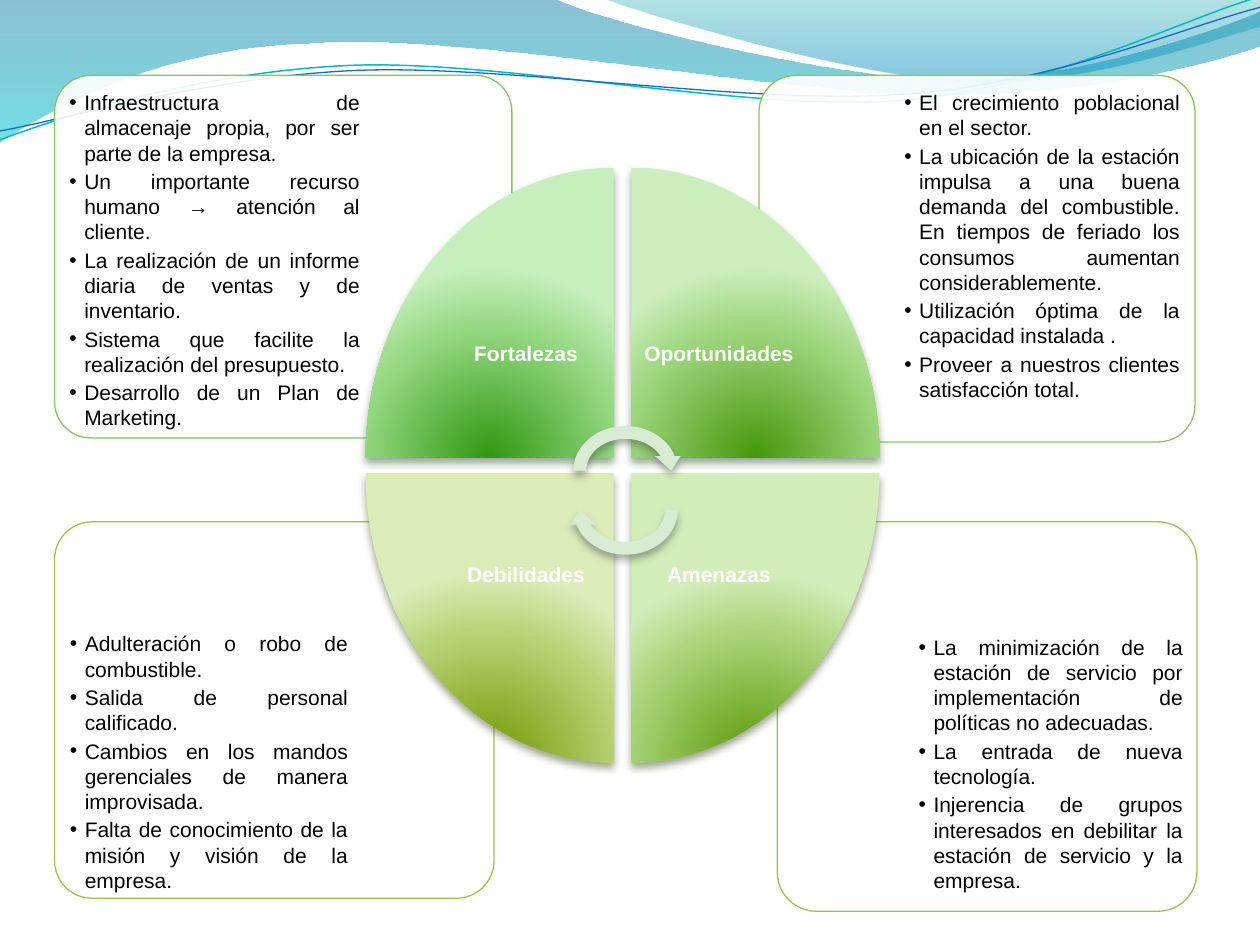
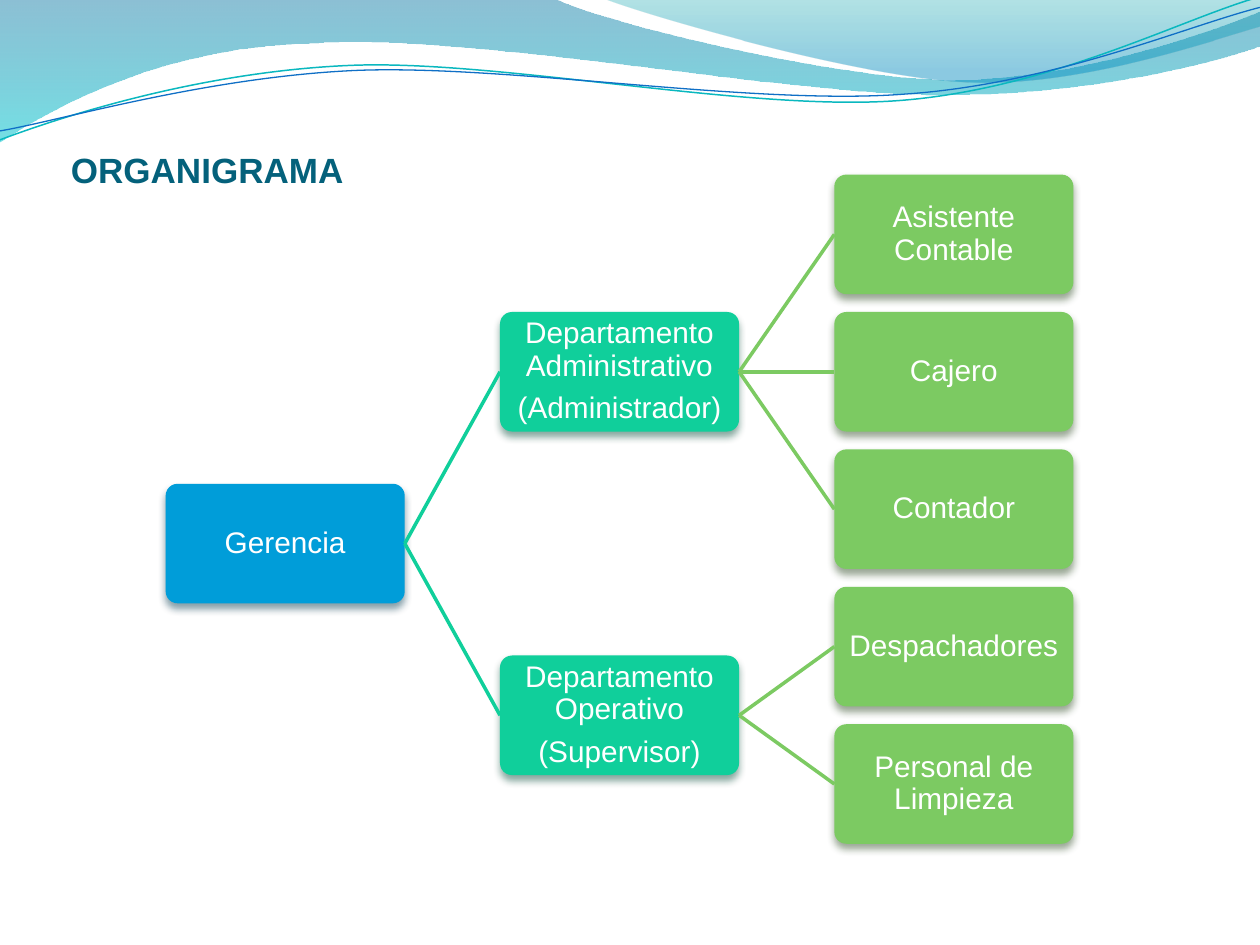
from lxml.etree import SubElement
from pptx import Presentation
from pptx.dml.color import RGBColor
from pptx.enum.shapes import MSO_CONNECTOR, MSO_SHAPE
from pptx.enum.text import MSO_ANCHOR, PP_ALIGN
from pptx.oxml.ns import qn
from pptx.util import Cm, Pt

WHITE = RGBColor(0xFF, 0xFF, 0xFF)
BLACK = RGBColor(0x00, 0x00, 0x00)
TITLE_TEAL = RGBColor(0x04, 0x61, 0x7B)
BLUE = RGBColor(0x00, 0x9D, 0xD9)
MINT = RGBColor(0x10, 0xCF, 0x9B)
GREEN = RGBColor(0x7C, 0xCA, 0x62)
PALE_GREEN = RGBColor(0xD7, 0xEC, 0xD3)
WAVE_TEAL = RGBColor(0x0A, 0xB8, 0xBF)
WAVE_BLUE = RGBColor(0x0F, 0x6F, 0xC6)
OPPORTUNITY_GREEN = RGBColor(0x88, 0xC7, 0x5A)
THREAT_GREEN = RGBColor(0x95, 0xC5, 0x51)
WEAKNESS_GREEN = RGBColor(0xA5, 0xC2, 0x49)


def finish(shape, stops=None, radial=False, shadow=None):
    """Fill with gradient stops (position, colour, opacity) and set the soft shadow."""
    properties = shape.element.spPr
    if stops:
        shape.fill.gradient()
        gradient = properties.find(qn("a:gradFill"))
        for child in list(gradient):
            gradient.remove(child)
        gradient.set("rotWithShape", "0")
        stop_list = SubElement(gradient, qn("a:gsLst"))
        for position, colour, opacity in stops:
            stop = SubElement(stop_list, qn("a:gs"), pos=str(position * 1000))
            tint = SubElement(stop, qn("a:srgbClr"), val=colour)
            if opacity < 100:
                SubElement(tint, qn("a:alpha"), val=str(opacity * 1000))
        if radial:
            circle = SubElement(gradient, qn("a:path"), path="circle")
            SubElement(circle, qn("a:fillToRect"), l="50000", t="130000", r="50000", b="-30000")
        else:
            SubElement(gradient, qn("a:lin"), ang="5400000", scaled="0")
    shape.shadow.inherit = False
    if shadow:
        outer = SubElement(properties.find(qn("a:effectLst")), qn("a:outerShdw"),
                           blurRad=str(Pt(4.5)), dist=str(Pt(3)), dir="5400000", rotWithShape="0")
        tint = SubElement(outer, qn("a:srgbClr"), val=shadow)
        SubElement(tint, qn("a:alpha"), val="48000")


def write(shape, lines, size, colour, margins, align=PP_ALIGN.CENTER,
          anchor=MSO_ANCHOR.MIDDLE, spacing=0.9, gap=0, bold=False):
    """Set one paragraph per line; gap is the space between them in points."""
    frame = shape.text_frame
    frame.text = "\n".join(lines)
    frame.word_wrap = True
    frame.vertical_anchor = anchor
    frame.margin_left = frame.margin_right = Cm(margins[0])
    frame.margin_top = frame.margin_bottom = Cm(margins[1])
    for para in frame.paragraphs:
        para.alignment = align
        para.line_spacing = spacing
        for span in para.runs:
            span.font.name = "Arial"
            span.font.size = Pt(size)
            span.font.bold = bold
            span.font.color.rgb = colour
    for para in frame.paragraphs[:-1]:
        para.space_after = Pt(gap)


deck = Presentation()
deck.slide_width, deck.slide_height = Cm(25.4), Cm(19.05)
blank = deck.slide_layouts[6]
page = deck.slides.add_slide(blank)

# Waves shared through the master: a segment is one point (line) or three (Bézier curve)
bands = [
    ((0, 0),
     [[(11.18, -0.03)],
      [(12.09, 0.43), (16.87, 1.6), (19.25, 1.6)],
      [(21.67, 1.6), (24.33, 0.66), (25.4, 0.23)],
      [(25.43, 0.91)],
      [(24.97, 1.12), (22.1, 1.93), (18.95, 1.91)],
      [(15.8, 1.91), (9.7, 0.71), (6.53, 0.86)],
      [(3.28, 0.91), (1.17, 2.11), (-0.03, 2.87)]],
     [(0, "0074A1", 45), (100, "00C6CF", 55)], None, 0),
    ((12.17, -0.03),
     [[(12.93, 0.28), (17.32, 1.57), (19.53, 1.65)],
      [(21.74, 1.75), (24.41, 0.81), (25.4, 0.53)],
      [(25.4, 0)]],
     [(0, "00A1A9", 30), (80, "008BBF", 45)], None, 0),
    ((0, 2.82),
     [[(1.22, 2.36), (4.01, 1.45), (7.04, 1.32)],
      [(10.03, 1.19), (15.06, 2.26), (18.11, 2.03)],
      [(21.16, 1.8), (23.83, 0.38), (25.35, -0.05)]],
     None, WAVE_TEAL, 0.85),
    ((0, 2.64),
     [[(1.19, 2.44), (4.17, 1.55), (7.19, 1.42)],
      [(10.24, 1.3), (15.16, 2.13), (18.21, 1.9)],
      [(21.23, 1.7), (23.9, 0.53), (25.4, 0.15)]],
     None, WAVE_BLUE, 0.75),
]
for start, segments, stops, line_colour, line_width in bands:
    builder = page.shapes.build_freeform(Cm(start[0]), Cm(start[1]))
    builder.add_line_segments([(Cm(x), Cm(y)) for segment in segments for x, y in segment],
                              close=stops is not None)
    wave = builder.convert_to_shape()
    # Join the three lines of each curved segment into one Bézier curve
    lines = iter(list(wave.element.iter(qn("a:lnTo"))))
    for segment in segments:
        pieces = [next(lines) for _ in segment]
        if len(pieces) == 3:
            curve = SubElement(pieces[0].getparent(), qn("a:cubicBezTo"))
            pieces[0].addprevious(curve)
            for piece in pieces:
                curve.append(piece[0])
                piece.getparent().remove(piece)
    finish(wave, stops)
    if stops:
        wave.line.fill.background()
    else:
        wave.fill.background()
        wave.line.color.rgb = line_colour
        wave.line.width = Pt(line_width)
    deck.slide_master.shapes.element.append(wave.element)

# Slide 1: SWOT cards, with the card and its text placed separately
cards = [
    ((15.67, 10.52, 8.46, 7.85), (18.39, 12.66, 5.59, 5.54), THREAT_GREEN,
     ["La minimización de la estación de servicio por implementación de políticas no adecuadas.",
      "La entrada de nueva tecnología.",
      "Injerencia de grupos interesados en debilitar la estación de servicio y la empresa."]),
    ((1.1, 10.52, 8.86, 7.59), (1.28, 12.59, 5.87, 5.36), WEAKNESS_GREEN,
     ["Adulteración o robo de combustible.",
      "Salida de personal calificado.",
      "Cambios en los mandos gerenciales de manera improvisada.",
      "Falta de conocimiento de la misión y visión de la empresa."]),
    ((15.3, 1.52, 8.79, 7.39), (18.1, 1.68, 5.82, 5.23), OPPORTUNITY_GREEN,
     ["El crecimiento poblacional en el sector.",
      "La ubicación de la estación impulsa a una buena demanda del combustible. "
      "En tiempos de feriado los consumos aumentan considerablemente.",
      "Utilización óptima de la capacidad instalada .",
      "Proveer a nuestros clientes satisfacción total."]),
    ((1.1, 1.52, 9.22, 7.31), (1.27, 1.68, 6.12, 5.16), GREEN,
     ["Infraestructura de almacenaje propia, por ser parte de la empresa.",
      "Un importante recurso humano → atención al cliente.",
      "La realización de un informe diaria de ventas y de inventario.",
      "Sistema que facilite la realización del presupuesto.",
      "Desarrollo de un Plan de Marketing."]),
]
for card_place, text_place, border, points in cards:
    card = page.shapes.add_shape(MSO_SHAPE.ROUNDED_RECTANGLE, *map(Cm, card_place))
    card.adjustments[0] = 0.1
    card.fill.solid()
    card.fill.fore_color.rgb = WHITE
    SubElement(card.element.spPr.find(qn("a:solidFill"))[0], qn("a:alpha"), val="90000")
    card.line.color.rgb = border
    card.line.width = Pt(0.75)
    finish(card)
    box = page.shapes.add_textbox(*map(Cm, text_place))
    write(box, points, 12, BLACK, (0.13, 0.13), PP_ALIGN.JUSTIFY, MSO_ANCHOR.TOP, 1.0, 1.8)
    for para in box.text_frame.paragraphs:
        para.level = 1
        settings = para._p.get_or_add_pPr()
        settings.set("marL", str(Cm(0.3)))
        settings.set("indent", str(-Cm(0.3)))
        SubElement(settings, qn("a:buFont"), typeface="Arial")
        SubElement(settings, qn("a:buChar"), char="•")

# Wedges clockwise from top left, each turned a quarter further
WEDGE_WIDTH, WEDGE_HEIGHT = 5.0, 5.84
LEFT, RIGHT, TOP, BOTTOM = 7.37, 12.73, 3.38, 9.53
LABEL_WIDTH, LABEL_HEIGHT = 3.53, 4.14
wedges = [
    ("Fortalezas", LEFT, TOP, ("319811", "95D882", "C6EFBD"), "2B4821"),
    ("Oportunidades", RIGHT, TOP, ("45980B", "9ED67E", "CCEEBC"), "2F471F"),
    ("Amenazas", RIGHT, BOTTOM, ("5A9905", "AAD479", "D3EDBA"), "35461C"),
    ("Debilidades", LEFT, BOTTOM, ("729800", "B8D275", "DBECB9"), "3A4519"),
]
for turn, (label, left, top, colours, shadow) in enumerate(wedges):
    width, height = (WEDGE_HEIGHT, WEDGE_WIDTH) if turn % 2 else (WEDGE_WIDTH, WEDGE_HEIGHT)
    wedge = page.shapes.add_shape(
        MSO_SHAPE.PIE_WEDGE, Cm(left + (WEDGE_WIDTH - width) / 2),
        Cm(top + (WEDGE_HEIGHT - height) / 2), Cm(width), Cm(height))
    wedge.rotation = 90 * turn
    wedge.line.fill.background()
    finish(wedge, list(zip((0, 68, 100), colours, (100, 100, 100))), True, shadow)
    label_left = left + WEDGE_WIDTH - LABEL_WIDTH if left == LEFT else left
    label_top = top + WEDGE_HEIGHT - LABEL_HEIGHT if top == TOP else top
    box = page.shapes.add_textbox(Cm(label_left), Cm(label_top), Cm(LABEL_WIDTH), Cm(LABEL_HEIGHT))
    write(box, [label], 12, WHITE, (0.23, 0.23), bold=True)

for top, angle in ((8.46, 0), (9.25, 180)):
    arrow = page.shapes.add_shape(MSO_SHAPE.CIRCULAR_ARROW, Cm(11.43), Cm(top), Cm(2.36), Cm(2.06))
    arrow.rotation = angle
    arrow.fill.solid()
    arrow.fill.fore_color.rgb = PALE_GREEN
    arrow.line.fill.background()
    finish(arrow, shadow="4B534A")

# Slide 2: organisation chart
page = deck.slides.add_slide(blank)
title = page.shapes.add_textbox(Cm(1.3), Cm(2.53), Cm(11.23), Cm(1.78))
write(title, ["ORGANIGRAMA"], 20, TITLE_TEAL, (0.13, 0), PP_ALIGN.LEFT, spacing=1.0, bold=True)
title.text_frame.paragraphs[0].space_before = Pt(4)

NODE_WIDTH, NODE_HEIGHT = 4.82, 2.41
FIRST_LEFT, FIRST_TOP = 3.34, 3.52
COLUMN_STEP, ROW_STEP = 6.74, 2.77
level_styles = [(BLUE, "00374C"), (MINT, "044A37"), (GREEN, "2B4821")]
# Level, row, index of the parent node, lines of text; parents sit midway between their children
nodes = [
    (0, 2.25, None, ["Gerencia"]),
    (1, 1, 0, ["Departamento Administrativo", "(Administrador)"]),
    (1, 3.5, 0, ["Departamento Operativo", "(Supervisor)"]),
    (2, 0, 1, ["Asistente Contable"]),
    (2, 1, 1, ["Cajero"]),
    (2, 2, 1, ["Contador"]),
    (2, 3, 2, ["Despachadores"]),
    (2, 4, 2, ["Personal de Limpieza"]),
]
boxes = []
for level, row, parent, lines in nodes:
    colour, shadow = level_styles[level]
    box = page.shapes.add_shape(
        MSO_SHAPE.ROUNDED_RECTANGLE, Cm(FIRST_LEFT + level * COLUMN_STEP),
        Cm(FIRST_TOP + row * ROW_STEP), Cm(NODE_WIDTH), Cm(NODE_HEIGHT))
    box.adjustments[0] = 0.1
    box.fill.solid()
    box.fill.fore_color.rgb = colour
    box.line.fill.background()
    finish(box, shadow=shadow)
    write(box, lines, 17, WHITE, (0.1, 0.1), gap=6)
    boxes.append(box)
    if parent is not None:
        link = page.shapes.add_connector(MSO_CONNECTOR.STRAIGHT, 0, 0, 0, 0)
        link.begin_connect(boxes[parent], 3)
        link.end_connect(box, 1)
        link.line.color.rgb = colour
        link.line.width = Pt(2)
        SubElement(link.element.spPr, qn("a:effectLst"))

deck.save("out.pptx")
